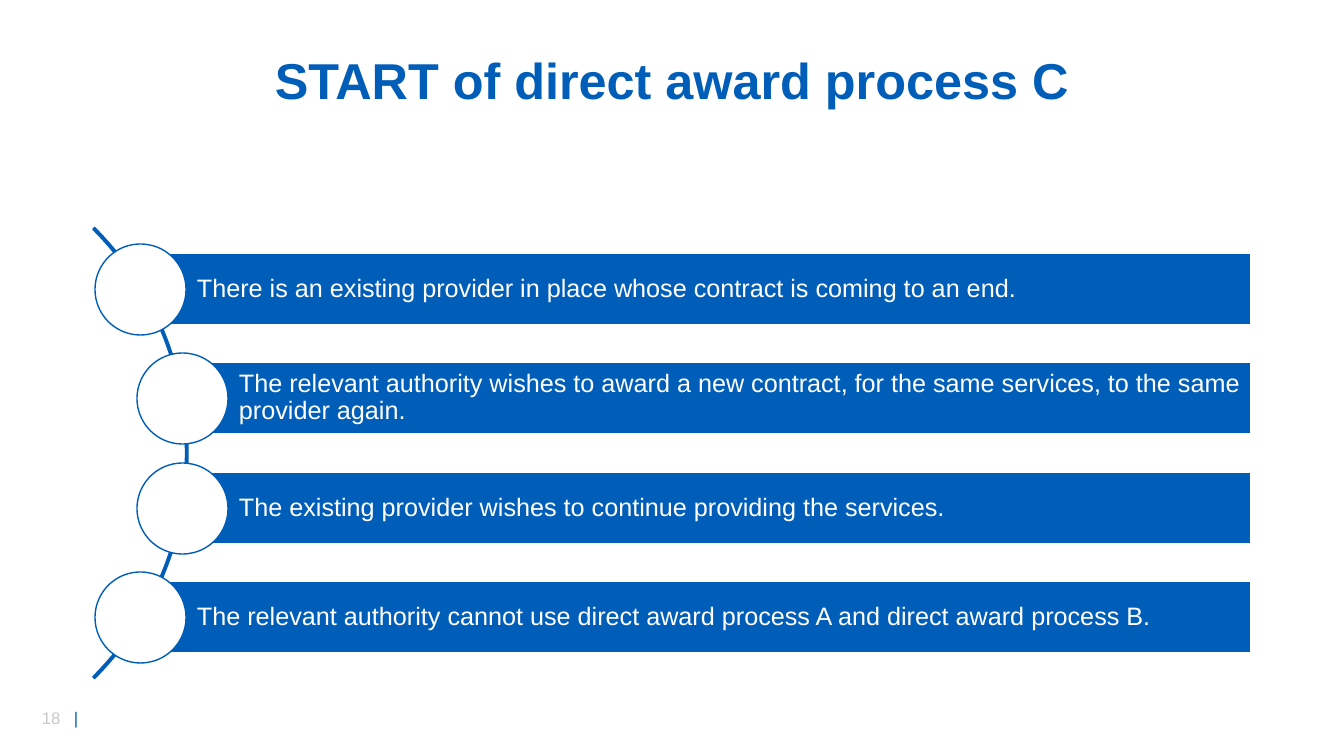
from dataclasses import dataclass

from lxml.etree import SubElement
from pptx import Presentation
from pptx.dml.color import RGBColor as Rgb
from pptx.enum.shapes import MSO_SHAPE as Kind
from pptx.enum.text import MSO_ANCHOR as Anchor, PP_ALIGN as Align
from pptx.oxml.ns import qn
from pptx.shapes.autoshape import Shape
from pptx.slide import Slide
from pptx.text.text import Font
from pptx.util import Emu, Pt

HUES = {"blue": "005EB8", "white": "FFFFFF", "grey": "C9C9C9"}
FACE = "Arial"
RIGHT = 1251
TOP = 253
SPAN = 328
BAR = 72
DISC = 91


@dataclass
class Step:
    text: str
    left: int


STEPS = [
    Step("There is an existing provider in place whose contract is coming to an end.", 140),
    Step("The relevant authority wishes to award a new contract, for the same services, "
         "to the same provider again.", 182),
    Step("The existing provider wishes to continue providing the services.", 182),
    Step("The relevant authority cannot use direct award process A and direct award process B.", 140),
]


def px(size: int) -> Emu:
    return Emu(round(size * 12192000 / 1344))


def style(font: Font, size: int, hue: str, bold: bool = False) -> None:
    font.name = FACE
    font.size = Pt(size)
    font.bold = bold
    font.color.rgb = Rgb.from_string(HUES[hue])


def draw(slide: Slide, kind: Kind, left: int, top: int, width: int, height: int,
         fill: str, line: str) -> Shape:
    shape = slide.shapes.add_shape(kind, px(left), px(top), px(width), px(height))
    shape.shadow.inherit = False
    shape.fill.solid()
    shape.fill.fore_color.rgb = Rgb.from_string(HUES[fill])
    shape.line.color.rgb = Rgb.from_string(HUES[line])
    shape.line.width = Pt(1)
    return shape


def add_title(slide: Slide, text: str) -> None:
    box = slide.shapes.add_textbox(px(211), px(41), px(922), px(85))
    frame = box.text_frame
    frame.word_wrap = True
    frame.vertical_anchor = Anchor.MIDDLE
    frame.text = text
    para = frame.paragraphs[0]
    para.alignment = Align.CENTER
    para.line_spacing = 0.9
    style(para.runs[0].font, 36, "blue", True)


def add_footer(slide: Slide, number: str) -> None:
    box = slide.shapes.add_textbox(px(32), px(703), px(72), px(30))
    box.text_frame.word_wrap = True
    para = box.text_frame.paragraphs[0]
    for text, hue in ((number, "grey"), ("\t|", "blue")):
        run = para.add_run()
        run.text = text
        style(run.font, 12, hue)
    tabs = SubElement(para._p.get_or_add_pPr(), qn("a:tabLst"))
    SubElement(tabs, qn("a:tab"), pos=str(px(32)), algn="l")


def add_arc(slide: Slide) -> None:
    arc = draw(slide, Kind.BLOCK_ARC, -450, 134, 638, 638, "blue", "blue")
    for index, value in enumerate((189, 27, 0.004)):
        arc.adjustments[index] = value


def add_step(slide: Slide, step: Step, top: int) -> None:
    bar = draw(slide, Kind.RECTANGLE, step.left, top, RIGHT - step.left, BAR, "blue", "white")
    frame = bar.text_frame
    frame.word_wrap = True
    frame.vertical_anchor = Anchor.MIDDLE
    frame.margin_left = px(57)
    frame.margin_top = frame.margin_right = frame.margin_bottom = px(5)
    frame.text = step.text
    para = frame.paragraphs[0]
    para.alignment = Align.LEFT
    para.line_spacing = 0.9
    style(para.runs[0].font, 18, "white")
    draw(slide, Kind.OVAL, step.left - DISC // 2, top + (BAR - DISC) // 2 + 1, DISC, DISC,
         "white", "blue")


def main() -> None:
    deck = Presentation()
    deck.slide_width = px(1344)
    deck.slide_height = px(756)
    slide = deck.slides.add_slide(deck.slide_layouts[6])
    add_footer(slide, "18")
    add_title(slide, "START of direct award process C")
    add_arc(slide)
    for index, step in enumerate(STEPS):
        add_step(slide, step, TOP + round(index * SPAN / (len(STEPS) - 1)))
    deck.save("out.pptx")


if __name__ == "__main__":
    main()
